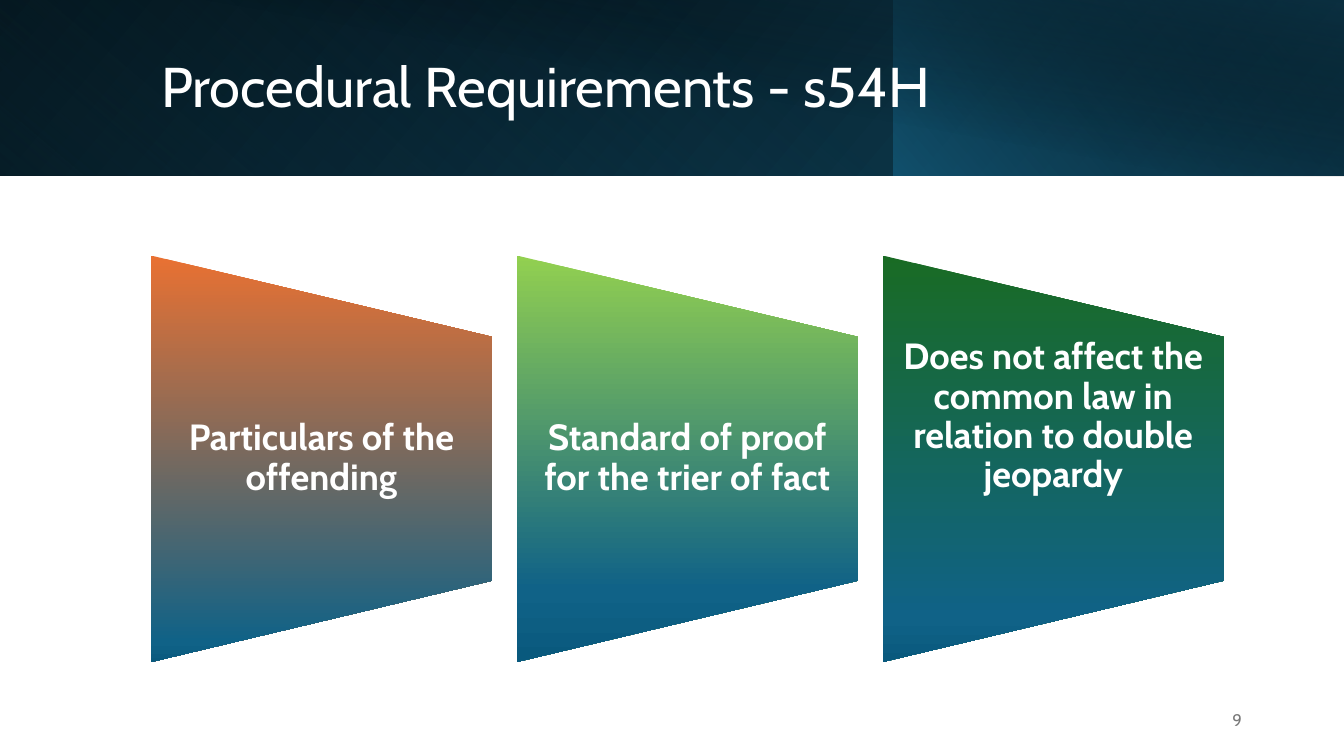
from lxml.etree import SubElement
from pptx import Presentation
from pptx.dml.color import RGBColor
from pptx.enum.shapes import MSO_SHAPE
from pptx.enum.text import MSO_ANCHOR, PP_ALIGN
from pptx.oxml.ns import qn
from pptx.util import Cm, Pt

# Content
TITLE = "Procedural Requirements - s54H"
PAGE = "9"
FONT = "Cabin"
HEX = {
    "white": "FFFFFF", "black": "000000", "grey": "797979",
    "teal": "104862", "blue": "156082", "navy": "0B3041",
    "sea": "106287", "deep": "09597D",
    "orange": "E97132", "lime": "92D050", "green": "196B24",
}
# Card text, top colour, middle stop (%), bottom inset (cm)
CARDS = [
    ("Particulars of the offending", "orange", 95, 0),
    ("Standard of proof for the trier of fact", "lime", 82, 0),
    ("Does not affect the common law in relation to double jeopardy",
     "green", 89, 2.1),
]
# Left, width, height (cm), rotation, flipped, angle, stops (%, colour, opacity)
BANDS = [
    (0, 33.87, 4.42, 0, True, 140, [(0, "black", 100), (100, "teal", 100)]),
    (0, 22.56, 4.42, 180, True, 230, [(20, "blue", 0), (100, "navy", 55)]),
    (22.53, 11.33, 4.42, 0, True, 220, [(0, "blue", 66), (100, "black", 30)]),
    (1.27, 32.59, 4.45, 0, False, 280, [(50, "black", 0), (99, "navy", 52)]),
]

deck = Presentation()
deck.slide_width, deck.slide_height = Cm(33.87), Cm(19.05)
slide = deck.slides.add_slide(deck.slide_layouts[6])


def add_form(kind, x, y, w, h, turn, angle, stops, fixed=False):
    """Add a borderless shape with a linear gradient."""
    form = slide.shapes.add_shape(kind, Cm(x), Cm(y), Cm(w), Cm(h))
    form.rotation = turn
    form.shadow.inherit = False
    form.line.fill.background()
    form.fill.gradient()
    grad = form._element.spPr.find(qn("a:gradFill"))
    for child in list(grad):
        grad.remove(child)
    grad.set("rotWithShape", "0" if fixed else "1")
    group = SubElement(grad, qn("a:gsLst"))
    for pos, name, alpha in stops:
        stop = SubElement(group, qn("a:gs"), pos=str(pos * 1000))
        tint = SubElement(stop, qn("a:srgbClr"), val=HEX[name])
        if alpha < 100:
            SubElement(tint, qn("a:alpha"), val=str(alpha * 1000))
    SubElement(grad, qn("a:lin"), ang=str(angle * 60000), scaled="0")
    return form


def add_text(text, x, y, w, h, size, color, align, bold=False):
    """Add a wrapped, vertically centred text box."""
    frame = slide.shapes.add_textbox(Cm(x), Cm(y), Cm(w), Cm(h)).text_frame
    frame.word_wrap = True
    frame.vertical_anchor = MSO_ANCHOR.MIDDLE
    para = frame.paragraphs[0]
    para.text = text
    para.alignment = align
    para.line_spacing = 0.9
    font = para.font
    font.name, font.size, font.bold = FONT, Pt(size), bold
    font.color.rgb = RGBColor.from_string(HEX[color])
    return frame


# Header bands and title
for x, w, h, turn, flip, angle, stops in BANDS:
    band = add_form(MSO_SHAPE.RECTANGLE, x, 0, w, h, turn, angle, stops)
    if flip:
        band._element.spPr.find(qn("a:xfrm")).set("flipH", "1")
add_text(TITLE, 3.81, 0.81, 27.48, 2.87, 40, "white", PP_ALIGN.LEFT)

# Cards: trapezoids on their side, each with its text on top
LEFT, TOP, WIDE, TALL, STEP = 3.81, 6.44, 8.59, 10.24, 9.22
for i, (text, color, mid, low) in enumerate(CARDS):
    x = LEFT + i * STEP
    shift = (TALL - WIDE) / 2
    stops = [(0, color, 100), (mid, "sea", 100), (100, "deep", 100)]
    add_form(MSO_SHAPE.FLOWCHART_MANUAL_OPERATION, x - shift, TOP + shift,
             TALL, WIDE, 270, 90, stops, fixed=True)
    frame = add_text(text, x, TOP + TALL / 5, WIDE, TALL * 0.6, 26, "white",
                     PP_ALIGN.CENTER, True)
    frame.margin_left = frame.margin_right = Cm(0.46)
    frame.margin_top, frame.margin_bottom = 0, Cm(low)

# Page number
add_text(PAGE, 23.93, 17.65, 7.62, 1.02, 12, "grey", PP_ALIGN.RIGHT)

deck.save("out.pptx")
